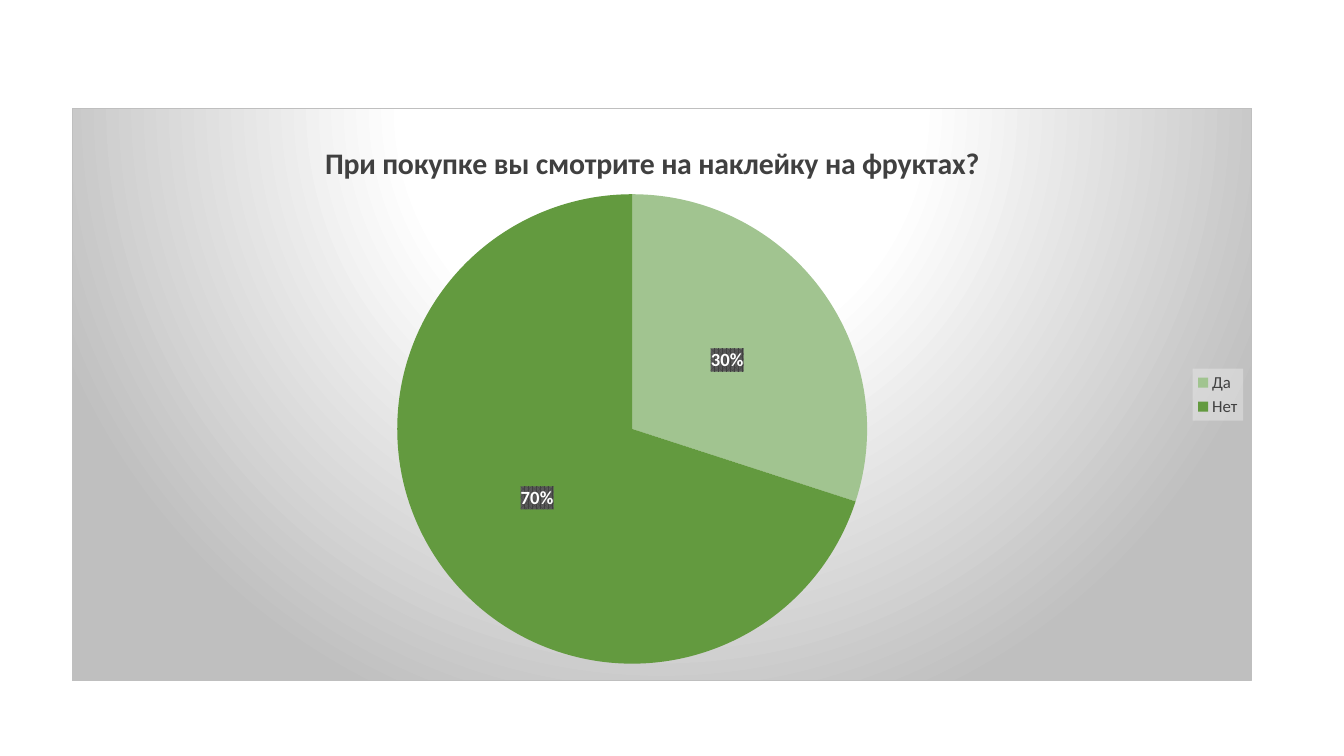
from lxml import etree
from pptx import Presentation
from pptx.chart import data as d
from pptx.dml.color import RGBColor
from pptx.enum import chart as c
from pptx.oxml import ns, parse_xml
from pptx.util import Pt

WHITE = RGBColor(0xFF, 0xFF, 0xFF)
BLACK = RGBColor(0x00, 0x00, 0x00)
DARK = RGBColor(0x40, 0x40, 0x40)
MID_GREY = RGBColor(0x59, 0x59, 0x59)
LIGHT_GREY = RGBColor(0xF2, 0xF2, 0xF2)
SILVER = RGBColor(0xBF, 0xBF, 0xBF)
PALE_GREEN = RGBColor(0xA1, 0xC4, 0x90)
GREEN = RGBColor(0x63, 0x9A, 0x3F)


def colour(value, inner=""):
    return f'<a:srgbClr val="{value}">{inner}</a:srgbClr>'


class SurveySlide:
    font_name = "Calibri"

    def __init__(self, presentation):
        self.slide = presentation.slides.add_slide(presentation.slide_layouts[6])

    def style(self, font, size, shade, bold=False):
        font.name = self.font_name
        font.size = Pt(size)
        font.bold = bold
        font.color.rgb = shade

    def paint(self, element, xml):
        properties = parse_xml(f'<c:spPr {ns.nsdecls("c", "a")}>{xml}</c:spPr>')
        element.find(ns.qn("c:txPr")).addprevious(properties)

    def place(self, element, index, **fractions):
        for old in element.findall(ns.qn("c:layout")):
            element.remove(old)
        layout = etree.Element(ns.qn("c:layout"))
        manual = etree.SubElement(layout, ns.qn("c:manualLayout"))
        if "w" in fractions:
            etree.SubElement(manual, ns.qn("c:layoutTarget"), val="inner")
        for axis in ("x", "y"):
            etree.SubElement(manual, ns.qn(f"c:{axis}Mode"), val="edge")
        for key, value in fractions.items():
            etree.SubElement(manual, ns.qn(f"c:{key}"), val=str(value))
        element.insert(index, layout)

    def pie(self, left, top, width, height, question, answers):
        survey = d.CategoryChartData(number_format="General")
        survey.categories = [answer for answer, _, _ in answers]
        survey.add_series("Series 1", [share for _, share, _ in answers])
        chart = self.slide.shapes.add_chart(
            c.XL_CHART_TYPE.PIE, Pt(left), Pt(top), Pt(width), Pt(height), survey
        ).chart
        self.style(chart.font, 10, BLACK)
        self.title(chart, question)
        self.slices(chart.plots[0], [shade for _, _, shade in answers])
        self.legend(chart)
        self.backdrop(chart)
        plot_area = chart.element.find(".//" + ns.qn("c:plotArea"))
        self.place(plot_area, 0, x=0.27, y=0.15, w=0.41, h=0.82)

    def title(self, chart, question):
        chart.has_title = True
        run = chart.chart_title.text_frame.paragraphs[0].add_run()
        run.text = question
        self.style(run.font, 21.3, DARK, bold=True)
        chart.chart_title.include_in_layout = False
        self.place(chart.element.find(".//" + ns.qn("c:title")), 1, x=0.21, y=0.05)

    def slices(self, plot, shades):
        plot.vary_by_categories = True
        series = plot.series[0]
        for index, shade in enumerate(shades):
            fill = series.points[index].format.fill
            fill.solid()
            fill.fore_color.rgb = shade
        labels = series.data_labels
        labels.show_percentage = True
        labels.show_value = False
        labels.number_format = "0%"
        labels.number_format_is_linked = False
        labels.position = c.XL_LABEL_POSITION.CENTER
        self.style(labels.font, 13.3, WHITE, bold=True)
        self.paint(
            plot.series[0].data_labels._element,
            f'<a:pattFill prst="pct75"><a:fgClr>{colour(DARK)}</a:fgClr>'
            f"<a:bgClr>{colour(MID_GREY)}</a:bgClr></a:pattFill>",
        )

    def legend(self, chart):
        chart.has_legend = True
        chart.legend.position = c.XL_LEGEND_POSITION.RIGHT
        chart.legend.include_in_layout = False
        self.style(chart.legend.font, 12, DARK)
        tint = colour(LIGHT_GREY, '<a:alpha val="39000"/>')
        self.paint(
            chart.element.find(".//" + ns.qn("c:legend")),
            f"<a:solidFill>{tint}</a:solidFill>",
        )

    def backdrop(self, chart):
        stops = "".join(
            f'<a:gs pos="{percent * 1000}">{colour(shade)}</a:gs>'
            for percent, shade in ((0, WHITE), (39, WHITE), (100, SILVER))
        )
        self.paint(
            chart.element,
            f'<a:gradFill><a:gsLst>{stops}</a:gsLst><a:path path="circle">'
            '<a:fillToRect l="50000" t="-80000" r="50000" b="180000"/></a:path></a:gradFill>'
            f'<a:ln w="{Pt(0.75)}"><a:solidFill>{colour(SILVER)}</a:solidFill></a:ln>',
        )


def main():
    presentation = Presentation()
    presentation.slide_width = Pt(960)
    presentation.slide_height = Pt(540)
    survey_slide = SurveySlide(presentation)
    survey_slide.pie(
        51.12, 77.04, 843.12, 409.68,
        "При покупке вы смотрите на наклейку на фруктах?",
        [("Да", 30, PALE_GREEN), ("Нет", 70, GREEN)],
    )
    presentation.save("out.pptx")


if __name__ == "__main__":
    main()
